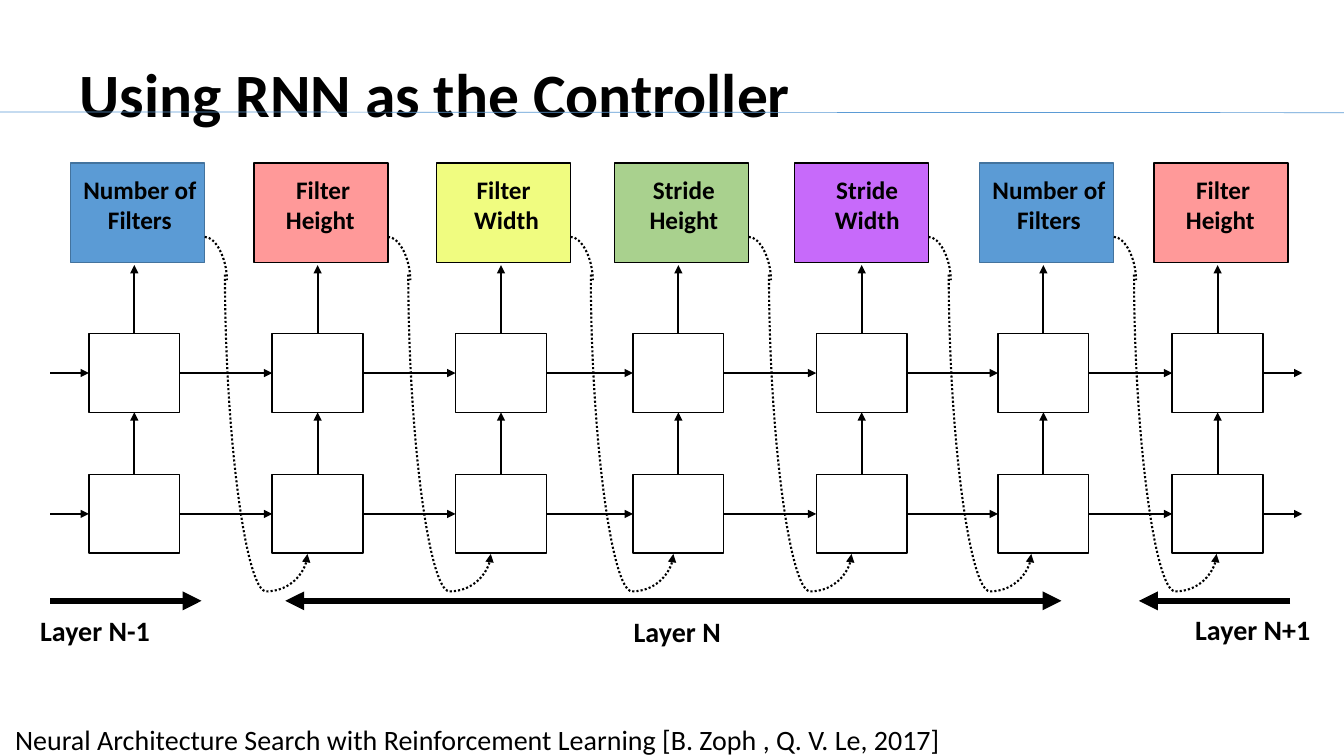
import dataclasses
import itertools

import lxml.etree
import pptx
import pptx.dml.color
import pptx.enum.dml
import pptx.enum.shapes
import pptx.enum.text
import pptx.oxml.ns
import pptx.presentation
import pptx.shapes.autoshape
import pptx.shapes.connector
import pptx.slide
import pptx.text.text
import pptx.util

Cm = pptx.util.Cm
Pt = pptx.util.Pt
qn = pptx.oxml.ns.qn

COLOURS = {
    "black": "000000", "white": "FFFFFF", "blue": "5B9BD5", "blue edge": "43739E",
    "pink": "FF9999", "yellow": "F0FC80", "green": "A9D18E", "purple": "C76AFA",
}
FRAME_FORMAT = {
    "word_wrap": True,
    "vertical_anchor": pptx.enum.text.MSO_ANCHOR.TOP,
    "auto_size": pptx.enum.text.MSO_AUTO_SIZE.SHAPE_TO_FIT_TEXT,
}
TITLE_FRAME_FORMAT = FRAME_FORMAT | {"auto_size": pptx.enum.text.MSO_AUTO_SIZE.NONE}
LEFT = {"alignment": pptx.enum.text.PP_ALIGN.LEFT}
CENTRE = {"alignment": pptx.enum.text.PP_ALIGN.CENTER}
TITLE_PARAGRAPH = LEFT | {"line_spacing": 0.9, "space_before": Pt(5)}

# Lengths below are centimetres.
HEADER_TOP, HEADER_WIDTH, HEADER_HEIGHT = 4.11, 3.38, 2.51
CELL_WIDTH, CELL_HEIGHT = 2.29, 1.98
CELL_TOPS = (8.41, 11.96)
TOP, SIDE_LEFT, BOTTOM, SIDE_RIGHT = range(4)


@dataclasses.dataclass(frozen=True)
class Step:
    """One time step of the controller: its output header and its cells."""
    lines: tuple[str, ...]
    fill: str
    header_left: float
    cell_left: float
    edge: str = "black"


@dataclasses.dataclass(frozen=True)
class Layer:
    name: str
    text_left: float
    text_top: float
    text_width: float
    arrow_start: float
    arrow_end: float
    double: bool = False


STEPS = (
    Step(("Number of Filters",), "blue", 1.78, 2.24, "blue edge"),
    Step(("Filter", "Height "), "pink", 6.40, 6.86),
    Step(("Filter ", "Width"), "yellow", 11.00, 11.48),
    Step(("Stride", "Height"), "green", 15.49, 15.95),
    Step(("Stride", "Width"), "purple", 20.02, 20.57),
    Step(("Number of Filters",), "blue", 24.69, 25.15, "blue edge"),
    Step(("Filter", "Height "), "pink", 29.08, 29.54),
)
LAYERS = (
    Layer("Layer N-1", 0.76, 15.34, 3.38, 1.27, 5.08),
    Layer("Layer N", 15.72, 15.37, 3.10, 7.19, 26.75, True),
    Layer("Layer N+1", 29.87, 15.32, 3.91, 32.51, 28.70),
)


def colour(name: str) -> pptx.dml.color.RGBColor:
    return pptx.dml.color.RGBColor.from_string(COLOURS[name])


def apply_format(target: object, values: dict[str, object]) -> None:
    for name, value in values.items():
        setattr(target, name, value)


def write_lines(frame: pptx.text.text.TextFrame, lines: tuple[str, ...], size: int,
                bold: bool, paragraph_format: dict[str, object]) -> None:
    frame.text = "\n".join(lines)
    for paragraph in frame.paragraphs:
        apply_format(paragraph, paragraph_format)
        for run in paragraph.runs:
            apply_format(run.font, {"name": "Calibri", "size": Pt(size), "bold": bold})
            run.font.color.rgb = colour("black")


def add_text(slide: pptx.slide.Slide, lines: tuple[str, ...], left: float, top: float,
             width: float, height: float, size: int, bold: bool = True,
             paragraph_format: dict[str, object] = LEFT) -> None:
    shape = slide.shapes.add_textbox(Cm(left), Cm(top), Cm(width), Cm(height))
    apply_format(shape.text_frame, FRAME_FORMAT)
    write_lines(shape.text_frame, lines, size, bold, paragraph_format)


def add_box(slide: pptx.slide.Slide, left: float, top: float, width: float, height: float,
            fill: str = "white", edge: str = "black") -> pptx.shapes.autoshape.Shape:
    shape = slide.shapes.add_shape(pptx.enum.shapes.MSO_SHAPE.RECTANGLE,
                                   Cm(left), Cm(top), Cm(width), Cm(height))
    shape.shadow.inherit = False
    shape.fill.solid()
    shape.fill.fore_color.rgb = colour(fill)
    shape.line.color.rgb = colour(edge)
    shape.line.width = Pt(1)
    return shape


def add_line(slide: pptx.slide.Slide, start: tuple[float, float], end: tuple[float, float],
             width: float = 1.5, line_colour: str = "black", ends: tuple[str, ...] = ("tailEnd",),
             curved: bool = False) -> pptx.shapes.connector.Connector:
    """Draw a connector; curved ones are dotted, and ends names the arrowheads."""
    kinds = pptx.enum.shapes.MSO_CONNECTOR
    connector = slide.shapes.add_connector(kinds.CURVE if curved else kinds.STRAIGHT,
                                           *map(Cm, start + end))
    connector.line.color.rgb = colour(line_colour)
    connector.line.width = Pt(width)
    if curved:
        connector.line.dash_style = pptx.enum.dml.MSO_LINE.ROUND_DOT
    properties = connector.element.spPr
    for name in ends:
        lxml.etree.SubElement(properties.find(qn("a:ln")), qn(f"a:{name}"), type="triangle")
    lxml.etree.SubElement(properties, qn("a:effectLst"))
    return connector


def add_step(slide: pptx.slide.Slide, step: Step) -> list[pptx.shapes.autoshape.Shape]:
    """Draw a column and return its upper and lower cells."""
    add_box(slide, step.header_left, HEADER_TOP, HEADER_WIDTH, HEADER_HEIGHT, step.fill, step.edge)
    add_text(slide, step.lines, step.cell_left - 0.81, 4.27, 4.19, 1.80, 18,
             paragraph_format=CENTRE)
    upper, lower = cells = [add_box(slide, step.cell_left, top, CELL_WIDTH, CELL_HEIGHT)
                            for top in CELL_TOPS]
    middle = step.cell_left + CELL_WIDTH / 2
    rise = add_line(slide, (middle, CELL_TOPS[1]), (middle, CELL_TOPS[0] + CELL_HEIGHT))
    rise.begin_connect(lower, TOP)
    rise.end_connect(upper, BOTTOM)
    output = add_line(slide, (middle, CELL_TOPS[0]), (middle, 6.68))
    output.begin_connect(upper, TOP)
    return cells


def add_feedback(slide: pptx.slide.Slide, step: Step) -> None:
    """Draw the dotted path from a header down to the next lower cell."""
    right = step.header_left + HEADER_WIDTH
    bend = add_line(slide, (right, 5.97), (right + 0.56, 7.06), ends=(), curved=True)
    bend.element.spPr.find(qn("a:prstGeom")).set("prst", "curvedConnector2")

    length, span = 7.04, 2.08
    left = right + 0.51 + (span - length) / 2
    drop = add_line(slide, (left, 9.40), (left + length, 9.40 + span), curved=True)
    properties = drop.element.spPr
    apply_turn = properties.find(qn("a:xfrm")).set
    apply_turn("rot", "16200000")
    apply_turn("flipH", "1")
    guides = properties.find(qn("a:prstGeom")).find(qn("a:avLst"))
    lxml.etree.SubElement(guides, qn("a:gd"), name="adj1", fmla="val 113400")


def add_row_arrows(slide: pptx.slide.Slide, cells: list[pptx.shapes.autoshape.Shape],
                   top: float) -> None:
    """Chain a row of cells, with one arrow entering and one leaving."""
    middle = top + CELL_HEIGHT / 2
    rights = [1.27] + [step.cell_left + CELL_WIDTH for step in STEPS]
    lefts = [step.cell_left for step in STEPS] + [32.82]
    for start, end, source, target in zip(rights, lefts, [None, *cells], [*cells, None]):
        arrow = add_line(slide, (start, middle), (end, middle))
        if source:
            arrow.begin_connect(source, SIDE_RIGHT)
        if target:
            arrow.end_connect(target, SIDE_LEFT)


def add_title(slide: pptx.slide.Slide) -> None:
    title = slide.shapes.title
    apply_format(title, {"left": Cm(1.75), "top": Cm(1.50), "width": Cm(19), "height": Cm(2.29)})
    apply_format(title.text_frame, TITLE_FRAME_FORMAT)
    write_lines(title.text_frame, ("Using RNN as the Controller",), 44, True, TITLE_PARAGRAPH)
    add_line(slide, (-0.56, 2.82), (35.18, 2.84), 0.5, "blue", ())


def main() -> None:
    presentation = pptx.Presentation()
    apply_format(presentation, {"slide_width": Cm(33.87), "slide_height": Cm(19.05)})
    slide = presentation.slides.add_slide(presentation.slide_layouts.get_by_name("Title Only"))
    add_title(slide)
    columns = [add_step(slide, step) for step in STEPS]
    for row, top in zip(zip(*columns), CELL_TOPS):
        add_row_arrows(slide, list(row), top)
    for step, _ in itertools.pairwise(STEPS):
        add_feedback(slide, step)
    for layer in LAYERS:
        ends = ("headEnd", "tailEnd") if layer.double else ("tailEnd",)
        add_line(slide, (layer.arrow_start, 15.14), (layer.arrow_end, 15.14), 4.5, ends=ends)
        add_text(slide, (layer.name,), layer.text_left, layer.text_top, layer.text_width, 1.12, 20)
    citation = "Neural Architecture Search with Reinforcement Learning [B. Zoph , Q. V. Le, 2017]"
    add_text(slide, (citation,), 0.13, 18.08, 28.40, 1.12, 20, bold=False)
    presentation.save("out.pptx")


if __name__ == "__main__":
    main()
